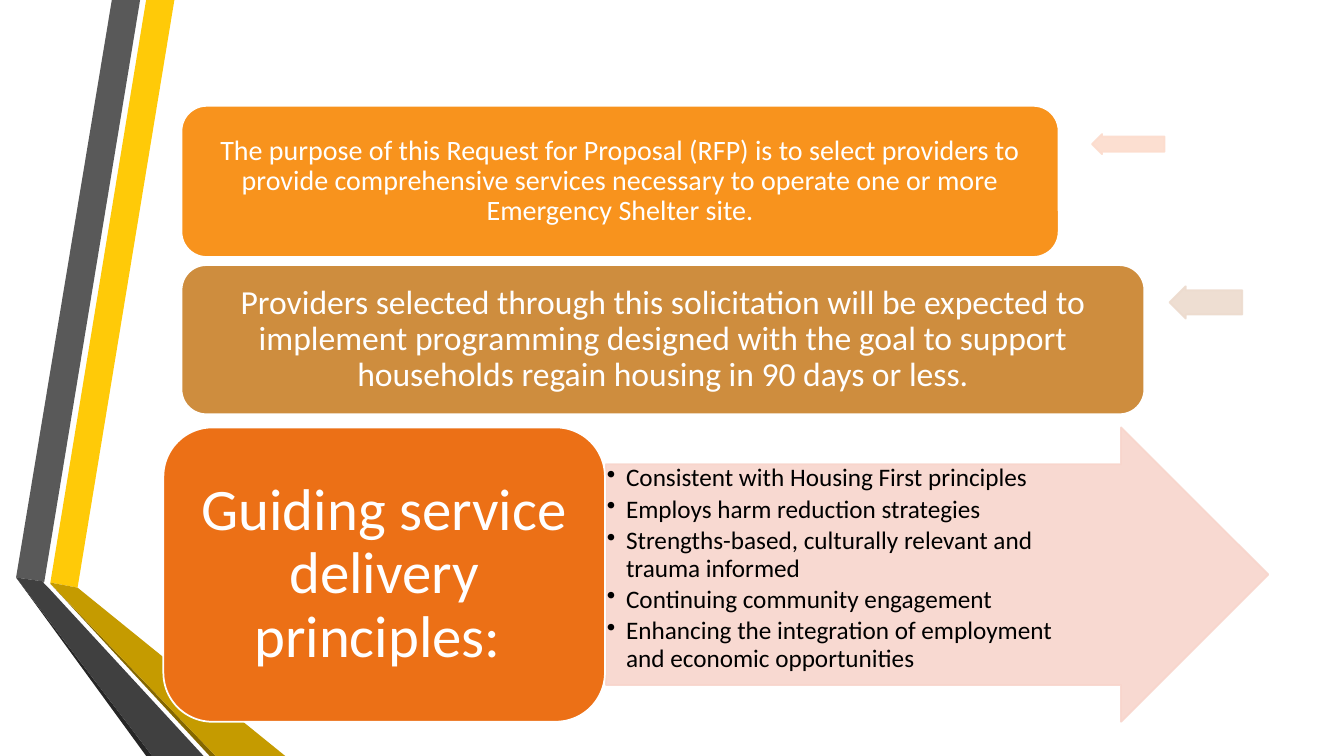
from dataclasses import dataclass

from lxml import etree
from pptx import Presentation
from pptx.dml.color import RGBColor
from pptx.enum.shapes import MSO_SHAPE
from pptx.enum.text import MSO_ANCHOR, PP_ALIGN
from pptx.oxml.ns import qn
from pptx.util import Inches, Pt

ROUNDED = MSO_SHAPE.ROUNDED_RECTANGLE
LEFT_ARROW = MSO_SHAPE.LEFT_ARROW
RIGHT_ARROW = MSO_SHAPE.RIGHT_ARROW
MIDDLE = MSO_ANCHOR.MIDDLE
TOP = MSO_ANCHOR.TOP
CENTER = PP_ALIGN.CENTER
LEFT = PP_ALIGN.LEFT


@dataclass(frozen=True)
class Theme:
    font: str = "Calibri"
    white: str = "FFFFFF"
    black: str = "000000"
    purpose: str = "F8931D"
    purpose_arrow: str = "FCDCCD"
    goal: str = "CE8D3E"
    goal_arrow: str = "EDDBCE"
    guiding: str = "EC7016"
    principles: str = "F8D5CC"
    purpose_size: int = 20
    goal_size: int = 24
    guiding_size: int = 42
    principles_size: int = 18
    line_width: float = 1.25
    arrow_opacity: int = 90


THEME = Theme()
WIDTH, HEIGHT = 13.33, 7.5

PURPOSE = (
    "The purpose of this Request for Proposal (RFP) is to select providers to provide "
    "comprehensive services necessary to operate one or more Emergency Shelter site."
)
GOAL = (
    "Providers selected through this solicitation will be expected to implement programming "
    "designed with the goal to support households regain housing in 90 days or less."
)
GUIDING = "Guiding service delivery principles: "
PRINCIPLES = [
    "Consistent with Housing First principles",
    "Employs harm reduction strategies",
    "Strengths-based, culturally relevant and trauma informed",
    "Continuing community engagement",
    "Enhancing the integration of employment and economic opportunities",
]

RIBBONS = [
    ("FFCA08", [(0.5, 5.78), (0.77, 5.83), (1.73, 0), (1.45, 0)]),
    ("595959", [(1.39, 0), (1.11, 0), (0.16, 5.73), (0.44, 5.77)]),
    ("262626", [(0.16, 5.73), (1.45, HEIGHT), (1.51, HEIGHT)]),
    ("846700", [(0.5, 5.79), (2.08, HEIGHT), (2.14, HEIGHT)]),
    ("C59B00", [(0.5, 5.79), (2.14, HEIGHT), (2.83, HEIGHT), (0.77, 5.83), (0.5, 5.78)]),
    ("404040", [(2.02, HEIGHT), (0.48, 5.83), (0.43, 5.78), (0.44, 5.77),
                (0.16, 5.73), (1.51, HEIGHT)]),
]

STATEMENT_LEFT = 1.8
STATEMENTS = [
    (PURPOSE, 1.05, 8.7, 1.5, THEME.purpose, THEME.purpose_size, (0.08, 0.04),
     THEME.purpose_arrow, (10.83, 1.33, 0.72, 0.2)),
    (GOAL, 2.63, 9.55, 1.48, THEME.goal, THEME.goal_size, (0.1, 0.05),
     THEME.goal_arrow, (11.6, 2.84, 0.72, 0.32)),
]
GUIDING_LEFT, GUIDING_TOP, GUIDING_WIDTH, GUIDING_HEIGHT = 1.62, 4.24, 4.38, 2.92
PRINCIPLES_LEFT = GUIDING_LEFT + GUIDING_WIDTH + 0.01
PRINCIPLES_WIDTH = 6.57
PRINCIPLES_INDENT = 0.19


def add_ribbon(slide, color, points):
    (start, *rest) = [(round(x * 100), round(y * 100)) for x, y in points]
    builder = slide.shapes.build_freeform(*start, scale=Inches(0.01))
    builder.add_line_segments(rest, close=True)
    ribbon = builder.convert_to_shape()
    ribbon.shadow.inherit = False
    ribbon.fill.solid()
    ribbon.fill.fore_color.rgb = RGBColor.from_string(color)
    ribbon.line.fill.background()


def add_panel(slide, kind, box, color, outline):
    panel = slide.shapes.add_shape(kind, *map(Inches, box))
    panel.shadow.inherit = False
    panel.fill.solid()
    panel.fill.fore_color.rgb = RGBColor.from_string(color)
    panel.line.color.rgb = RGBColor.from_string(outline)
    panel.line.width = Pt(THEME.line_width)
    return panel


def add_arrow(slide, kind, box, color):
    arrow = add_panel(slide, kind, box, color, color)
    arrow.adjustments[0] = 0.75
    arrow.adjustments[1] = 0.5
    for tint in arrow._element.spPr.iter(qn("a:srgbClr")):
        etree.SubElement(tint, qn("a:alpha"), val=str(THEME.arrow_opacity * 1000))
    return arrow


def write(panel, lines, size, color, insets, anchor=MIDDLE, align=CENTER, gap=0):
    frame = panel.text_frame
    frame.word_wrap = True
    frame.vertical_anchor = anchor
    frame.margin_left, frame.margin_top, frame.margin_right, frame.margin_bottom = map(
        Inches, insets)
    for number, line in enumerate(lines):
        paragraph = frame.add_paragraph() if number else frame.paragraphs[0]
        paragraph.text = line
        paragraph.alignment = align
        paragraph.line_spacing = 0.9
        paragraph.space_after = Pt(gap)
        paragraph.font.name = THEME.font
        paragraph.font.size = Pt(size)
        paragraph.font.color.rgb = RGBColor.from_string(color)


def add_bullets(panel, indent):
    for paragraph in panel.text_frame.paragraphs:
        properties = paragraph._p.get_or_add_pPr()
        properties.set("marL", str(Inches(indent)))
        properties.set("indent", str(-Inches(indent)))
        bullet = etree.Element(qn("a:buChar"), char="•")
        properties.find(qn("a:defRPr")).addprevious(bullet)


def main():
    deck = Presentation()
    deck.slide_width, deck.slide_height = Inches(WIDTH), Inches(HEIGHT)
    slide = deck.slides.add_slide(deck.slide_layouts.get_by_name("Blank"))

    for color, points in RIBBONS:
        add_ribbon(slide, color, points)

    for text, top, width, height, color, size, (side, edge), tint, arrow_box in STATEMENTS:
        add_arrow(slide, LEFT_ARROW, arrow_box, tint)
        box = (STATEMENT_LEFT, top, width, height)
        statement = add_panel(slide, ROUNDED, box, color, THEME.white)
        write(statement, [text], size, THEME.white, (side, edge, side, edge))

    box = (PRINCIPLES_LEFT, GUIDING_TOP, PRINCIPLES_WIDTH, GUIDING_HEIGHT)
    principles = add_arrow(slide, RIGHT_ARROW, box, THEME.principles)
    write(principles, PRINCIPLES, THEME.principles_size, THEME.black,
          (0.01, 0.01, 0.72, 0.01), TOP, LEFT, gap=3)
    add_bullets(principles, PRINCIPLES_INDENT)

    box = (GUIDING_LEFT, GUIDING_TOP, GUIDING_WIDTH, GUIDING_HEIGHT)
    guiding = add_panel(slide, ROUNDED, box, THEME.guiding, THEME.white)
    write(guiding, [GUIDING], THEME.guiding_size, THEME.white, (0.17, 0.09, 0.17, 0.09))

    deck.save("out.pptx")


if __name__ == "__main__":
    main()
